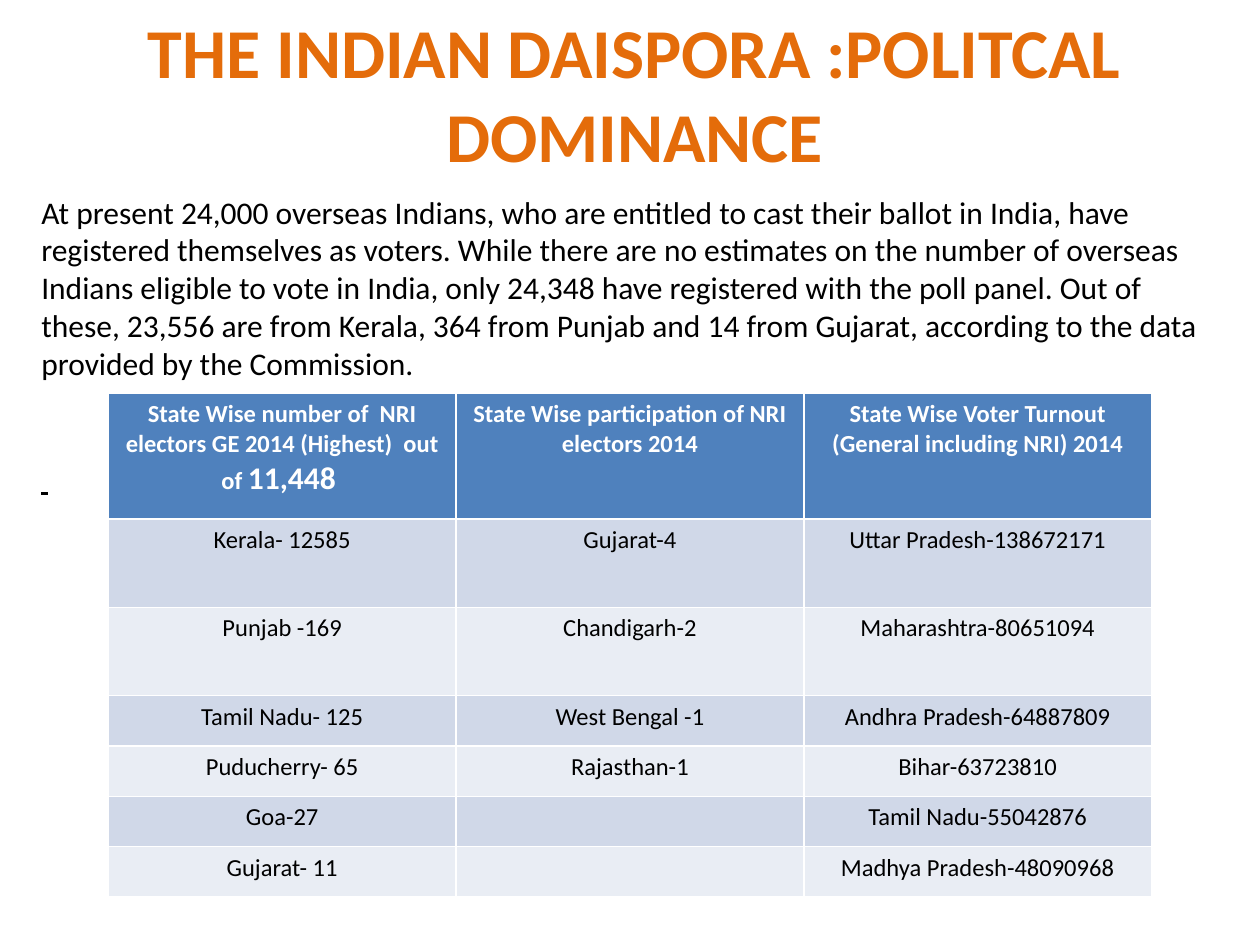
from pptx import Presentation
from pptx import util as u
from pptx.dml.color import RGBColor
from pptx.enum import text

TITLE = "THE INDIAN DAISPORA :POLITCAL DOMINANCE"
BODY = (
    "At present 24,000 overseas Indians, who are entitled to cast their ballot in India, "
    "have registered themselves as voters. While there are no estimates on the number of "
    "overseas Indians eligible to vote in India, only 24,348 have registered with the poll "
    "panel. Out of these, 23,556 are from Kerala, 364 from Punjab and 14 from Gujarat, "
    "according to the data provided by the Commission."
)
TOTAL = "11,448 "
ROWS = [
    ("State Wise number of  NRI electors GE 2014 (Highest)  out of ",
     "State Wise participation of NRI electors 2014",
     "State Wise Voter Turnout (General including NRI) 2014"),
    ("Kerala- 12585", "Gujarat-4", "Uttar Pradesh-138672171"),
    ("Punjab -169", "Chandigarh-2", "Maharashtra-80651094"),
    ("Tamil Nadu- 125", "West Bengal -1", "Andhra Pradesh-64887809"),
    ("Puducherry- 65", "Rajasthan-1", "Bihar-63723810"),
    ("Goa-27", "", "Tamil Nadu-55042876"),
    ("Gujarat- 11", "", "Madhya Pradesh-48090968"),
]
HEIGHTS = [1, 0.7, 0.7, 0.4, 0.4, 0.4, 0.4]
COL_WIDTH = 2.76
HEADER, BANDS = "4F81BD", ("E9EDF4", "D0D8E8")
CENTER = text.PP_ALIGN.CENTER


def color(value):
    return RGBColor.from_string(value)


def style(p, size, hue, bold=False, align=None):
    p.alignment = align
    p.font.name = "Calibri"
    p.font.size = u.Pt(size)
    p.font.bold = bold
    p.font.color.rgb = color(hue)


def add_text(s, box, content, *look):
    tf = s.shapes.add_textbox(*map(u.Inches, box)).text_frame
    tf.word_wrap = True
    p = tf.paragraphs[0]
    p.text = content
    style(p, *look)
    return tf


prs = Presentation()
prs.slide_width, prs.slide_height = u.Inches(10), u.Inches(7.5)
s = prs.slides.add_slide(prs.slide_layouts[6])

tf = add_text(s, (0.31, 0.3, 9.45, 0.87), TITLE, 40, "E46C0A", True, CENTER)
tf.vertical_anchor = text.MSO_ANCHOR.MIDDLE

tf = add_text(s, (0.23, 1.48, 9.53, 2.83), BODY, 18, "000000")
p = tf.add_paragraph()
p.text = " "
style(p, 18, "000000")
p.runs[0].font.underline = True
p.space_before = u.Pt(44)

columns = len(ROWS[0])
table = s.shapes.add_table(
    len(ROWS), columns, u.Inches(0.86), u.Inches(3.12),
    u.Inches(COL_WIDTH * columns), u.Inches(sum(HEIGHTS))).table
for column in table.columns:
    column.width = u.Inches(COL_WIDTH)
for i, (row, height) in enumerate(zip(ROWS, HEIGHTS)):
    table.rows[i].height = u.Inches(height)
    for j, content in enumerate(row):
        cell = table.cell(i, j)
        cell.fill.solid()
        cell.fill.fore_color.rgb = color(BANDS[i % 2] if i else HEADER)
        p = cell.text_frame.paragraphs[0]
        p.text = content
        style(p, 14, "000000" if i else "FFFFFF", i == 0, CENTER)

r = table.cell(0, 0).text_frame.paragraphs[0].add_run()
r.text = TOTAL
r.font.size = u.Pt(18)

prs.save("out.pptx")
